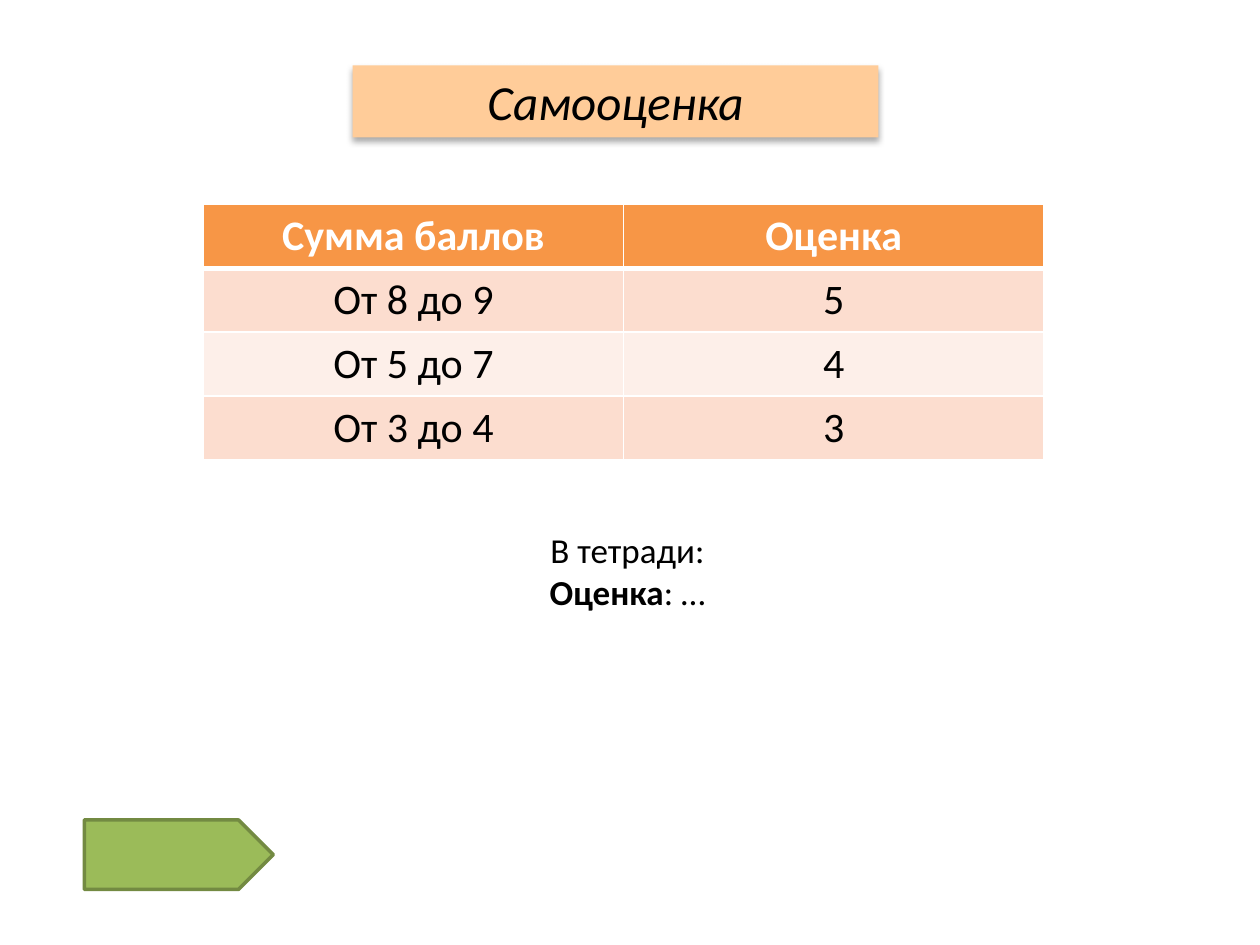
import pptx
import pptx.dml.color
import pptx.enum.shapes
import pptx.enum.text
import pptx.oxml
import pptx.oxml.ns
import pptx.util
from pptx.util import Cm

TITLE = "Самооценка"
GRADES = [
    ("Сумма баллов", "Оценка"),
    ("От 8 до 9", "5"),
    ("От 5 до 7", "4"),
    ("От 3 до 4", "3"),
]
NOTEBOOK = [[("В тетради:", False)], [("Оценка", True), (": …", False)]]

THEME = {
    "font": "Calibri",
    "text": "000000",
    "white": "FFFFFF",
    "title_fill": "FFCC99",
    "header_fill": "F79646",
    "bands": ("FCDDCF", "FDEFE9"),
    "arrow_fill": "9BBB59",
    "arrow_line": "738A42",
    "title_size": 28,
    "table_size": 24,
    "note_size": 20,
}
TITLE_BOX = (Cm(7.11), Cm(1.32), Cm(10.6), Cm(1.45))
ARROW_BOX = (Cm(1.7), Cm(16.53), Cm(3.81), Cm(1.4))
TABLE_BOX = (Cm(4.1), Cm(4.12), Cm(16.94), Cm(5.08))
NOTE_BOX = (Cm(6.3), Cm(10.52), Cm(12.7), Cm(1.96))

SHADOW = (
    '<a:outerShdw {} blurRad="44450" dist="27940" dir="5400000" algn="ctr">'
    '<a:srgbClr val="000000"><a:alpha val="32000"/></a:srgbClr></a:outerShdw>'
)
BORDER = (
    '<a:{side} {namespace} w="{width}"><a:solidFill><a:srgbClr val="{color}"/>'
    "</a:solidFill></a:{side}>"
)
NAMESPACE = pptx.oxml.ns.nsdecls("a")


def rgb(value):
    return pptx.dml.color.RGBColor.from_string(value)


def paint(target, color):
    target.fill.solid()
    target.fill.fore_color.rgb = rgb(color)


def write(paragraph, runs, size, color=THEME["text"], italic=False):
    paragraph.alignment = pptx.enum.text.PP_ALIGN.CENTER
    for text, bold in runs:
        run = paragraph.add_run()
        run.text = text
        formats = {
            "name": THEME["font"],
            "size": pptx.util.Pt(size),
            "bold": bold,
            "italic": italic,
        }
        for name, value in formats.items():
            setattr(run.font, name, value)
        run.font.color.rgb = rgb(color)


def add_box(slide, kind, box, color):
    shape = slide.shapes.add_shape(kind, *box)
    shape.shadow.inherit = False
    paint(shape, color)
    return shape


def add_title(slide):
    shape = add_box(slide, pptx.enum.shapes.MSO_SHAPE.RECTANGLE, TITLE_BOX, THEME["title_fill"])
    shape.line.fill.background()
    effects = shape._element.spPr.find(pptx.oxml.ns.qn("a:effectLst"))
    effects.append(pptx.oxml.parse_xml(SHADOW.format(NAMESPACE)))
    write(shape.text_frame.paragraphs[0], [(TITLE, False)], THEME["title_size"], italic=True)


def add_arrow(slide):
    shape = add_box(slide, pptx.enum.shapes.MSO_SHAPE.PENTAGON, ARROW_BOX, THEME["arrow_fill"])
    shape.line.color.rgb = rgb(THEME["arrow_line"])
    shape.line.width = pptx.util.Pt(2)


def add_borders(cell, row):
    properties = cell._tc.get_or_add_tcPr()
    widths = {"lnL": 1, "lnR": 1, "lnT": 3 if row == 1 else 1, "lnB": 3 if row == 0 else 1}
    for side, width in widths.items():
        border = BORDER.format(
            side=side, namespace=NAMESPACE, width=pptx.util.Pt(width), color=THEME["white"]
        )
        properties.append(pptx.oxml.parse_xml(border))


def add_grades(slide):
    table = slide.shapes.add_table(len(GRADES), len(GRADES[0]), *TABLE_BOX).table
    for row, texts in enumerate(GRADES):
        header = row == 0
        fill = THEME["header_fill"] if header else THEME["bands"][(row - 1) % 2]
        color = THEME["white"] if header else THEME["text"]
        for column, text in enumerate(texts):
            cell = table.cell(row, column)
            add_borders(cell, row)
            paint(cell, fill)
            write(cell.text_frame.paragraphs[0], [(text, header)], THEME["table_size"], color)


def add_note(slide):
    frame = slide.shapes.add_textbox(*NOTE_BOX).text_frame
    frame.word_wrap = True
    for index, runs in enumerate(NOTEBOOK):
        paragraph = frame.add_paragraph() if index else frame.paragraphs[0]
        write(paragraph, runs, THEME["note_size"])


def main():
    """Build the self-assessment slide and save it."""
    presentation = pptx.Presentation()
    presentation.slide_width = Cm(25.4)
    presentation.slide_height = Cm(19.05)
    slide = presentation.slides.add_slide(presentation.slide_layouts[6])
    for add_part in (add_title, add_arrow, add_grades, add_note):
        add_part(slide)
    presentation.save("out.pptx")


if __name__ == "__main__":
    main()
